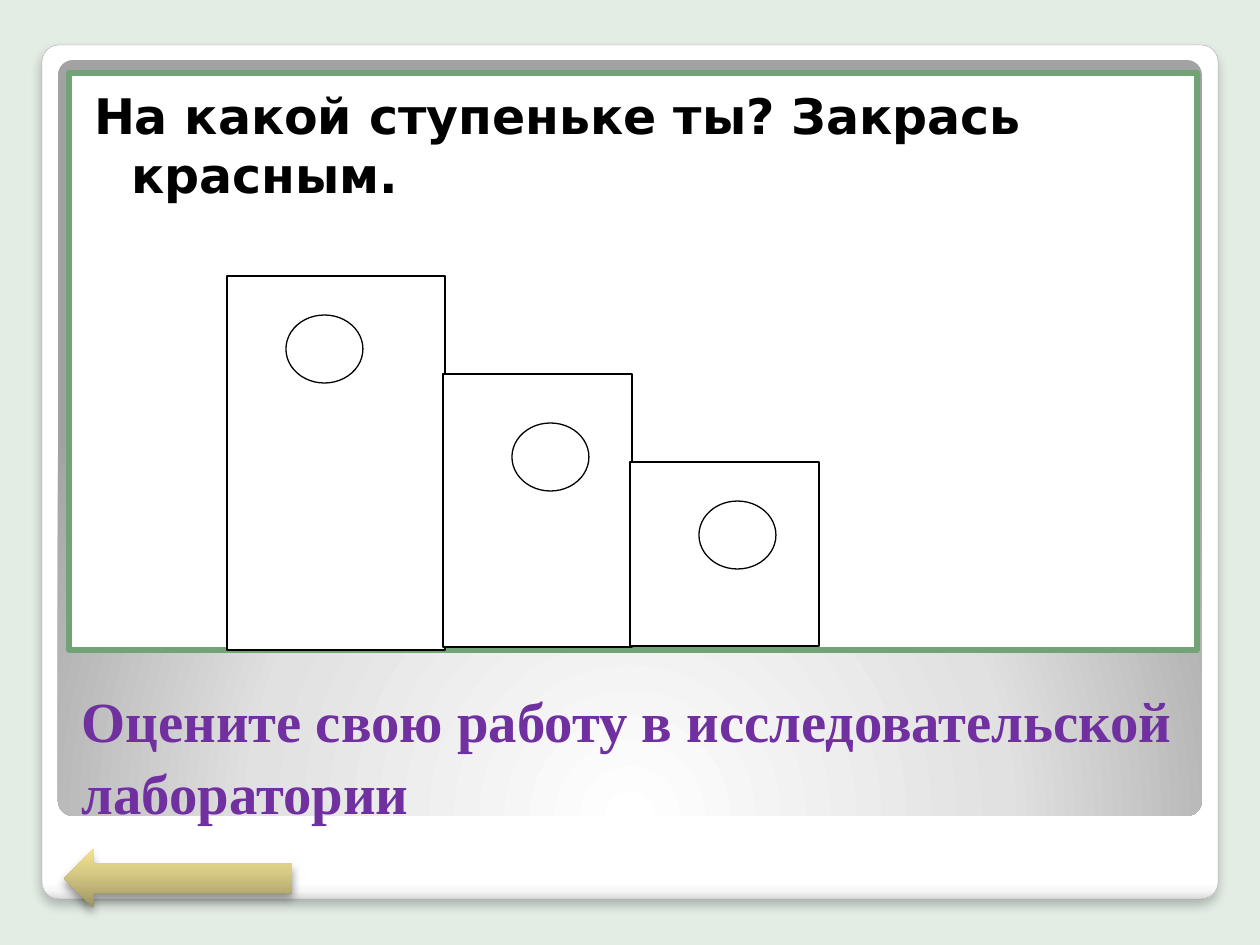
"""Build a self-assessment slide with three steps, a circle on each, and a back arrow."""
from lxml import etree
from pptx import Presentation
from pptx.dml.color import RGBColor
from pptx.enum.shapes import MSO_SHAPE as Preset
from pptx.enum.text import MSO_ANCHOR as Anchor, PP_ALIGN as Align
from pptx.oxml import parse_xml
from pptx.oxml.ns import nsdecls, qn
from pptx.util import Pt

PX = 914400 / 126
MINT = RGBColor(0xE3, 0xED, 0xE4)
GREEN = RGBColor(0x72, 0xA3, 0x76)
GREY = RGBColor(0xA4, 0xA4, 0xA4)
PURPLE = RGBColor(0x70, 0x30, 0xA0)
WHITE = RGBColor(0xFF, 0xFF, 0xFF)
BLACK = RGBColor(0, 0, 0)

CARD_STOPS = [(0, "FFFFFF"), (98, "FFFFFF"), (99, "F7F7F7"), (100, "DADADA")]
PANEL_STOPS = [(0, "FFFFFF"), (55, "E1E1E1"), (100, "A2A2A2")]
ARROW_STOPS = [(0, "9C9260"), (60, "D7CA86"), (100, "F6E389")]
RADIAL = ('<a:path path="circle"><a:fillToRect l="50000" t="175000" '
          'r="50000" b="-75000"/></a:path>')

STEPS = [(227, 276, 218, 374), (443, 374, 189, 273), (630, 462, 189, 184)]
CIRCLES = [(286, 315), (512, 423), (699, 501)]
CIRCLE_SIZE = (77, 68)


def px(length):
    """Turn pixels into EMU."""
    return round(length * PX)


def linear(angle):
    """Return the direction part of a linear gradient."""
    return f'<a:lin ang="{angle * 60000}" scaled="0"/>'


def add_box(page, preset, place, fill=None, line=None, width=0.75):
    """Add a preset shape with a plain fill and line and no shadow."""
    box = page.shapes.add_shape(preset, *map(px, place))
    box.shadow.inherit = False
    if fill is None:
        box.fill.background()
    else:
        box.fill.solid()
        box.fill.fore_color.rgb = fill
    if line is None:
        box.line.fill.background()
    else:
        box.line.color.rgb = line
        box.line.width = Pt(width)
    return box


def set_gradient(box, stops, direction):
    """Replace the empty fill of a box with a gradient."""
    marks = "".join(f'<a:gs pos="{position * 1000}"><a:srgbClr val="{color}"/></a:gs>'
                    for position, color in stops)
    gradient = parse_xml(f'<a:gradFill {nsdecls("a")} rotWithShape="1">'
                         f'<a:gsLst>{marks}</a:gsLst>{direction}</a:gradFill>')
    properties = box.element.spPr
    properties.replace(properties.find(qn("a:noFill")), gradient)


def set_shadow(box, opacity, blur, distance):
    """Give a box a black shadow that falls straight down."""
    effects = box.element.spPr.find(qn("a:effectLst"))
    shadow = etree.SubElement(effects, qn("a:outerShdw"), blurRad=str(Pt(blur)),
                              dist=str(Pt(distance)), dir="5400000", rotWithShape="0")
    color = etree.SubElement(shadow, qn("a:srgbClr"), val="000000")
    etree.SubElement(color, qn("a:alpha"), val=str(opacity * 1000))


def set_text(box, text, color, frame_format, para_format, font_format):
    """Write one formatted paragraph into a box."""
    frame = box.text_frame
    para = frame.paragraphs[0]
    span = para.add_run()
    span.text = text
    span.font.color.rgb = color
    for target, values in ((frame, frame_format), (para, para_format),
                           (span.font, font_format)):
        for name, value in values.items():
            setattr(target, name, value)
    return para


def add_backdrop(page):
    """Add the rounded white card and the grey panel on it."""
    card = add_box(page, Preset.ROUNDED_RECTANGLE, (42, 45, 1176, 854), line=GREY, width=0.16)
    panel = add_box(page, Preset.ROUNDED_RECTANGLE, (58, 60, 1144, 756))
    for box, stops, direction in ((card, CARD_STOPS, linear(90)),
                                  (panel, PANEL_STOPS, RADIAL)):
        box.adjustments[0] = 0.02
        set_gradient(box, stops, direction)
    set_shadow(card, 25, 6, 4)


def place_title(page):
    """Format the title and bring it in front of the backdrop."""
    title = page.shapes.title
    title.left, title.top, title.width, title.height = map(px, (69, 687, 1128, 145))
    set_text(title, "Оцените свою работу в исследовательской лаборатории", PURPLE,
             {"vertical_anchor": Anchor.BOTTOM, "word_wrap": True},
             {"alignment": Align.LEFT, "line_spacing": 1.05},
             {"name": "Times New Roman", "size": Pt(32.4), "bold": True})
    title.element.getparent().append(title.element)


def add_task(page):
    """Add the framed white area with the question."""
    task = add_box(page, Preset.RECTANGLE, (69, 73, 1128, 577), WHITE, GREEN, 3.35)
    para = set_text(task, "На какой ступеньке ты? Закрась красным.", BLACK,
                    {"vertical_anchor": Anchor.TOP, "word_wrap": True,
                     "margin_left": px(25), "margin_top": px(13),
                     "margin_right": px(13), "margin_bottom": px(6)},
                    {"alignment": Align.LEFT, "space_before": Pt(2.5)},
                    {"name": "DejaVu Sans", "size": Pt(28), "bold": True})
    properties = para._p.get_or_add_pPr()
    properties.set("marL", str(px(37)))
    properties.set("indent", str(px(-37)))


def add_arrow(page):
    """Add the golden arrow that points back."""
    arrow = add_box(page, Preset.LEFT_ARROW, (64, 849, 228, 59))
    set_gradient(arrow, ARROW_STOPS, linear(270))
    set_shadow(arrow, 40, 5.2, 3)


def main():
    """Build and save the slide."""
    deck = Presentation()
    deck.slide_width, deck.slide_height = px(1260), px(945)
    page = deck.slides.add_slide(deck.slide_layouts[5])
    page.background.fill.solid()
    page.background.fill.fore_color.rgb = MINT
    add_backdrop(page)
    place_title(page)
    add_task(page)
    for place in STEPS:
        add_box(page, Preset.RECTANGLE, place, WHITE, BLACK)
    for corner in CIRCLES:
        add_box(page, Preset.OVAL, corner + CIRCLE_SIZE, WHITE, BLACK)
    add_arrow(page)
    deck.save("out.pptx")


if __name__ == "__main__":
    main()
